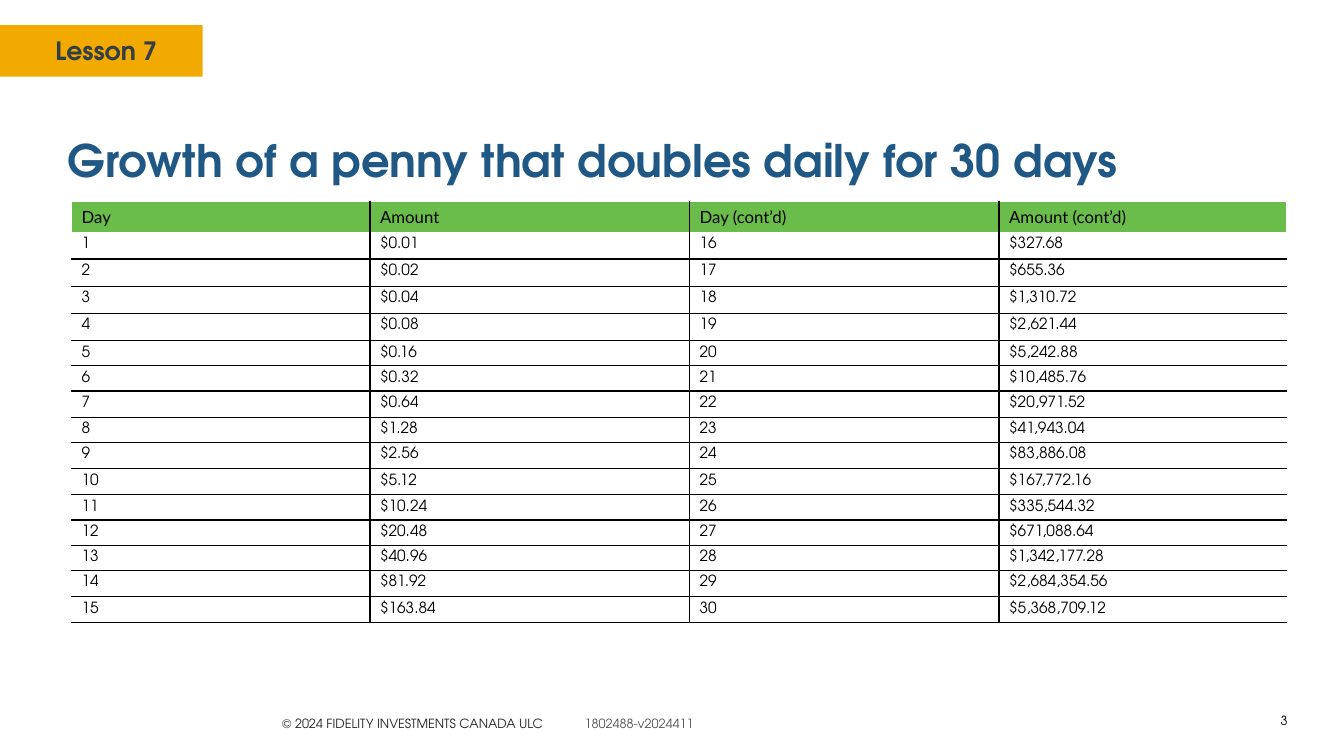
from dataclasses import dataclass

from lxml import etree
from pptx import Presentation
from pptx.dml.color import RGBColor
from pptx.enum.shapes import MSO_SHAPE
from pptx.enum.text import MSO_ANCHOR, MSO_AUTO_SIZE, PP_ALIGN
from pptx.oxml.ns import qn
from pptx.util import Inches, Pt

RECTANGLE = MSO_SHAPE.RECTANGLE
TOP, MIDDLE = MSO_ANCHOR.TOP, MSO_ANCHOR.MIDDLE
LEFT, RIGHT = PP_ALIGN.LEFT, PP_ALIGN.RIGHT
NO_AUTOSIZE = MSO_AUTO_SIZE.NONE

HEADING_FONT = "TeX Gyre Adventor"
HEADER_FONT = "Lato"
COLORS = {
    "amber": "F2A900",
    "slate": "333F48",
    "blue": "205885",
    "green": "6ABD4A",
    "black": "000000",
    "white": "FFFFFF",
    "copyright": "222222",
    "code": "545454",
}

HEADERS = ["Day", "Amount", "Day (cont’d)", "Amount (cont’d)"]
COLUMN_WIDTHS = [2.96, 3.17, 3.07, 2.85]
HEADER_HEIGHT = 0.3
DAY_HEIGHTS = [0.27, 0.27, 0.27, 0.27, 0.25, 0.25, 0.26, 0.25,
               0.26, 0.26, 0.25, 0.25, 0.25, 0.26, 0.26]
HALF = len(DAY_HEIGHTS)


@dataclass
class Run:
    text: str
    size: float
    color: str
    bold: bool = False
    font: str = HEADING_FONT


@dataclass
class Label:
    box: tuple[float, float, float, float]
    runs: list[Run]
    align: PP_ALIGN = LEFT
    anchor: MSO_ANCHOR = TOP
    tab: float = 0


def rgb(name: str) -> RGBColor:
    return RGBColor.from_string(COLORS[name])


def add_run(paragraph, run: Run) -> None:
    piece = paragraph.add_run()
    piece.text = run.text
    formats = {"size": Pt(run.size), "name": run.font, "bold": run.bold}
    for attribute, value in formats.items():
        setattr(piece.font, attribute, value)
    piece.font.color.rgb = rgb(run.color)


def fill_label(shape, label: Label) -> None:
    places = zip(("left", "top", "width", "height"), label.box)
    for attribute, value in places:
        setattr(shape, attribute, Inches(value))
    frame = shape.text_frame
    formats = {"word_wrap": True, "auto_size": NO_AUTOSIZE,
               "vertical_anchor": label.anchor}
    for attribute, value in formats.items():
        setattr(frame, attribute, value)
    paragraph = frame.paragraphs[0]
    paragraph.alignment = label.align
    if label.tab:
        stops = etree.SubElement(paragraph._p.get_or_add_pPr(), qn("a:tabLst"))
        etree.SubElement(stops, qn("a:tab"), pos=str(Inches(label.tab)), algn="l")
    for run in label.runs:
        add_run(paragraph, run)


def set_borders(cell, sides: dict[str, str]) -> None:
    properties = cell._tc.get_or_add_tcPr()
    for side in ("L", "R", "T", "B"):
        line = etree.SubElement(properties, qn(f"a:ln{side}"), w=str(Pt(1)))
        if side in sides:
            fill = etree.SubElement(line, qn("a:solidFill"))
            etree.SubElement(fill, qn("a:srgbClr"), val=COLORS[sides[side]])
        else:
            etree.SubElement(line, qn("a:noFill"))


def amount(day: int) -> str:
    return f"${2 ** (day - 1) / 100:,.2f}"


def add_growth_table(slide) -> None:
    rows = [HEADERS] + [
        [str(day), amount(day), str(day + HALF), amount(day + HALF)]
        for day in range(1, HALF + 1)
    ]
    heights = [HEADER_HEIGHT] + DAY_HEIGHTS
    table = slide.shapes.add_table(
        len(rows), len(HEADERS), Inches(0.71), Inches(2),
        Inches(sum(COLUMN_WIDTHS)), Inches(sum(heights))).table
    table.horz_banding = False
    for column, width in zip(table.columns, COLUMN_WIDTHS):
        column.width = Inches(width)
    for row, height in zip(table.rows, heights):
        row.height = Inches(height)

    last = len(HEADERS) - 1
    for r, texts in enumerate(rows):
        header = r == 0
        for c, text in enumerate(texts):
            cell = table.cell(r, c)
            sides = {"L": "white" if c == 0 else "black",
                     "R": "white" if c == last else "black"}
            if header:
                sides["T"] = "white"
            else:
                sides["B"] = "black"
            if r > 1:
                sides["T"] = "black"
            set_borders(cell, sides)
            if header:
                cell.fill.solid()
                cell.fill.fore_color.rgb = rgb("green")
                run = Run(text, 12, "black", font=HEADER_FONT)
            else:
                cell.fill.background()
                cell.margin_top, cell.margin_bottom = Inches(0.05), 0
                run = Run(text, 11, "black")
            cell.vertical_anchor = TOP
            add_run(cell.text_frame.paragraphs[0], run)


def main() -> None:
    deck = Presentation()
    deck.slide_width, deck.slide_height = Inches(13.33), Inches(7.5)
    slide = deck.slides.add_slide(deck.slide_layouts[5])

    # Lesson tab
    lesson_tab = slide.shapes.add_shape(
        RECTANGLE, 0, Inches(0.25), Inches(2.01), Inches(0.51))
    lesson_tab.shadow.inherit = False
    lesson_tab.fill.solid()
    lesson_tab.fill.fore_color.rgb = rgb("amber")
    lesson_tab.line.fill.background()

    # Title
    fill_label(slide.shapes.title, Label(
        (0.57, 1.27, 12.2, 0.73),
        [Run("Growth of a penny that doubles daily for 30 days", 32, "blue", True)]))

    # Lesson name, footer and page number
    labels = [
        Label((0.45, 0.3, 1.31, 0.4), [Run("Lesson 7", 18, "slate", True)]),
        Label((2.7, 7.05, 4.5, 0.25),
              [Run("© 2024 FIDELITY INVESTMENTS CANADA ULC\t", 9, "copyright"),
               Run("1802488-v2024411", 9, "code")], tab=3),
        Label((12.17, 7.06, 0.7, 0.18), [Run("3", 9, "black")], RIGHT, MIDDLE),
    ]
    for label in labels:
        fill_label(slide.shapes.add_textbox(0, 0, 0, 0), label)

    # Daily amounts
    add_growth_table(slide)
    deck.save("out.pptx")


if __name__ == "__main__":
    main()
